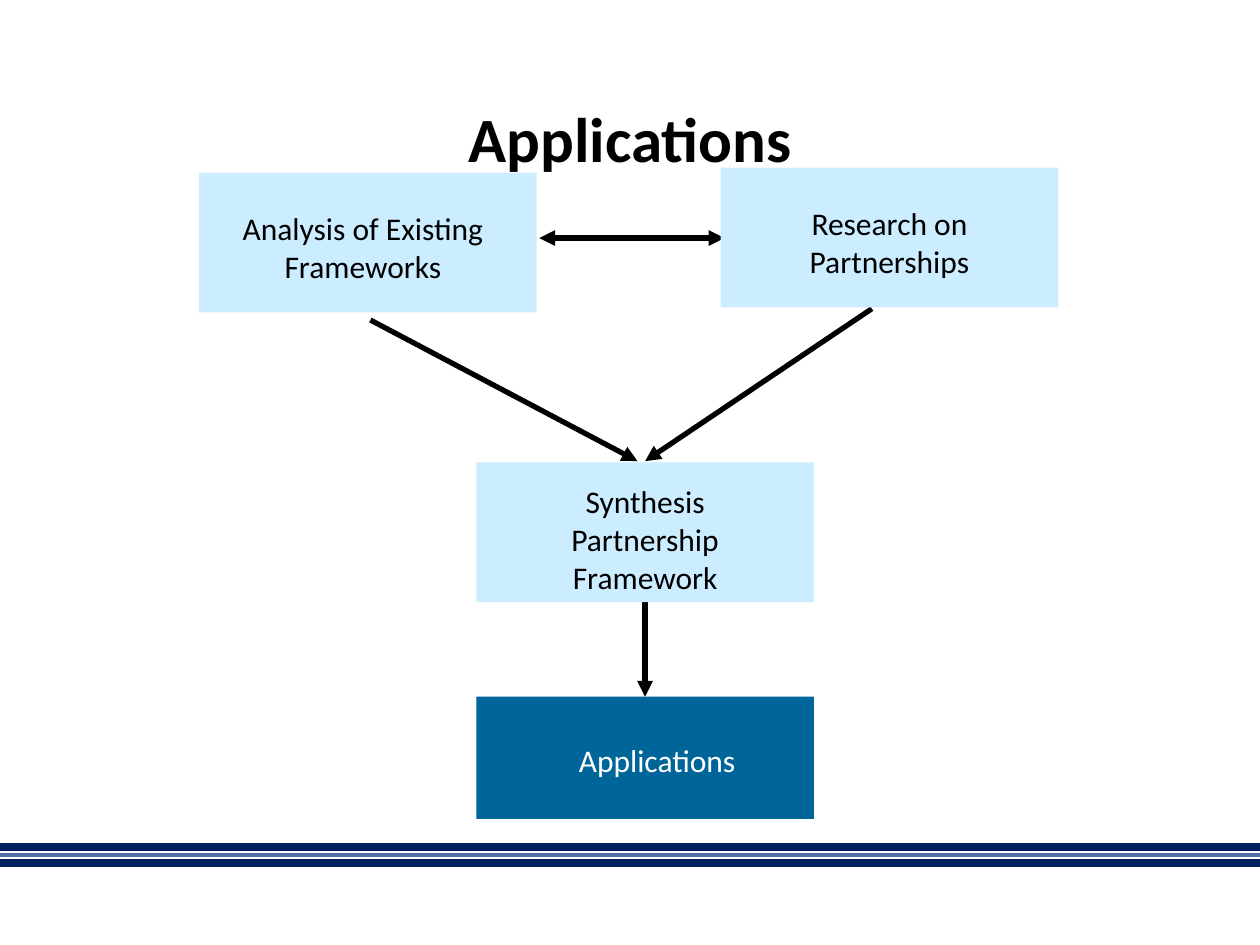
from dataclasses import dataclass

from lxml.etree import SubElement
from pptx import Presentation
from pptx.dml.color import RGBColor
from pptx.enum.shapes import MSO_CONNECTOR, MSO_SHAPE
from pptx.enum.text import MSO_ANCHOR, PP_ALIGN
from pptx.oxml.ns import qn
from pptx.util import Inches, Pt


@dataclass(frozen=True)
class Theme:
    font: str = "Calibri"
    ink: str = "000000"
    light_text: str = "FFFFFF"
    source_fill: str = "CCECFF"
    result_fill: str = "006699"
    rail_dark: str = "001F5F"
    rail_light: str = "5070A7"
    title_size: float = 36
    label_size: float = 18
    arrow_width: float = 3


THEME = Theme()


def style_paragraph(paragraph, size, color, bold=False):
    paragraph.alignment = PP_ALIGN.CENTER
    paragraph.font.name = THEME.font
    paragraph.font.size = Pt(size)
    paragraph.font.bold = bold
    paragraph.font.color.rgb = RGBColor.from_string(color)


def add_line(slide, start, end, color, width, head=False, tail=False):
    line = slide.shapes.add_connector(
        MSO_CONNECTOR.STRAIGHT, *(Inches(value) for value in (*start, *end))
    )
    line.line.color.rgb = RGBColor.from_string(color)
    line.line.width = Pt(width)
    outline = line.line._get_or_add_ln()
    for tag, wanted in (("a:headEnd", head), ("a:tailEnd", tail)):
        if wanted:
            SubElement(outline, qn(tag), type="triangle")
    SubElement(line._element.spPr, qn("a:effectLst"))


def add_title(slide, box, text):
    title = slide.shapes.title
    title.left, title.top, title.width, title.height = map(Inches, box)
    title.text_frame.text = text
    title.text_frame.word_wrap = True
    title.text_frame.vertical_anchor = MSO_ANCHOR.MIDDLE
    heading = title.text_frame.paragraphs[0]
    heading.line_spacing = 0.9
    style_paragraph(heading, THEME.title_size, THEME.ink, bold=True)


def add_rails(slide, box):
    left, top, width, height = box
    rails = (
        (0, THEME.rail_dark, 4.5),
        (0.5, THEME.rail_light, 2.25),
        (1, THEME.rail_dark, 4.5),
    )
    for share, color, weight in rails:
        y = top + share * height
        add_line(slide, (left, y), (left + width, y), color, weight)


def add_panel(slide, box, fill):
    panel = slide.shapes.add_shape(MSO_SHAPE.RECTANGLE, *map(Inches, box))
    panel.shadow.inherit = False
    panel.fill.solid()
    panel.fill.fore_color.rgb = RGBColor.from_string(fill)
    panel.line.fill.background()
    return panel


def add_stage(slide, box, label_box, text, fill, color, indent=0):
    left, top, _, _ = box
    dx, dy, width, height = label_box
    add_panel(slide, box, fill)
    label = add_panel(slide, (left + dx, top + dy, width, height), fill)
    frame = label.text_frame
    frame.text = text
    frame.word_wrap = True
    frame.vertical_anchor = MSO_ANCHOR.TOP
    frame.margin_left = Inches(0.1 + indent)
    style_paragraph(frame.paragraphs[0], THEME.label_size, color)


def add_flow(slide, box):
    left, top, width, height = box
    stage_width, stage_height, result_height = 2.68, 1.11, 0.97
    middle_left = left + 2.2
    middle_x = middle_left + stage_width / 2
    synthesis_top = top + 2.34
    result_top = top + height - result_height

    arrows = (
        ((left + 1.36, top + 1.21), (middle_x - 0.06, synthesis_top - 0.01), False),
        ((middle_x, synthesis_top + stage_height), (middle_x, result_top), False),
        ((left + 2.7, top + 0.56), (left + 4.17, top + 0.56), True),
        ((left + 5.34, top + 1.12), (middle_x, synthesis_top - 0.01), False),
    )
    for start, end, both_ways in arrows:
        add_line(slide, start, end, THEME.ink, THEME.arrow_width,
                 head=both_ways, tail=True)

    add_stage(slide, (middle_left, result_top, stage_width, result_height),
              (0.18, 0.3, 2.2, 0.4), "Applications",
              THEME.result_fill, THEME.light_text, indent=0.31)

    sources = (
        (middle_left, synthesis_top, (0.24, 0.11, 2.2, 0.9),
         "Synthesis Partnership Framework"),
        (left + width - stage_width, top, (0.24, 0.24, 2.2, 0.63),
         "Research on Partnerships"),
        (left, top + 0.04, (0.04, 0.24, 2.52, 0.63),
         "Analysis of Existing Frameworks"),
    )
    for x, y, label_box, text in sources:
        add_stage(slide, (x, y, stage_width, stage_height), label_box, text,
                  THEME.source_fill, THEME.ink)


def main():
    deck = Presentation()
    deck.slide_width, deck.slide_height = Inches(10), Inches(7.5)
    slide = deck.slides.add_slide(deck.slide_layouts[5])
    add_rails(slide, (0, 6.72, 10, 0.13))
    add_title(slide, (0.69, 0.4, 8.62, 1.45), "Applications")
    add_flow(slide, (1.58, 1.33, 6.82, 5.17))
    deck.save("out.pptx")


if __name__ == "__main__":
    main()
